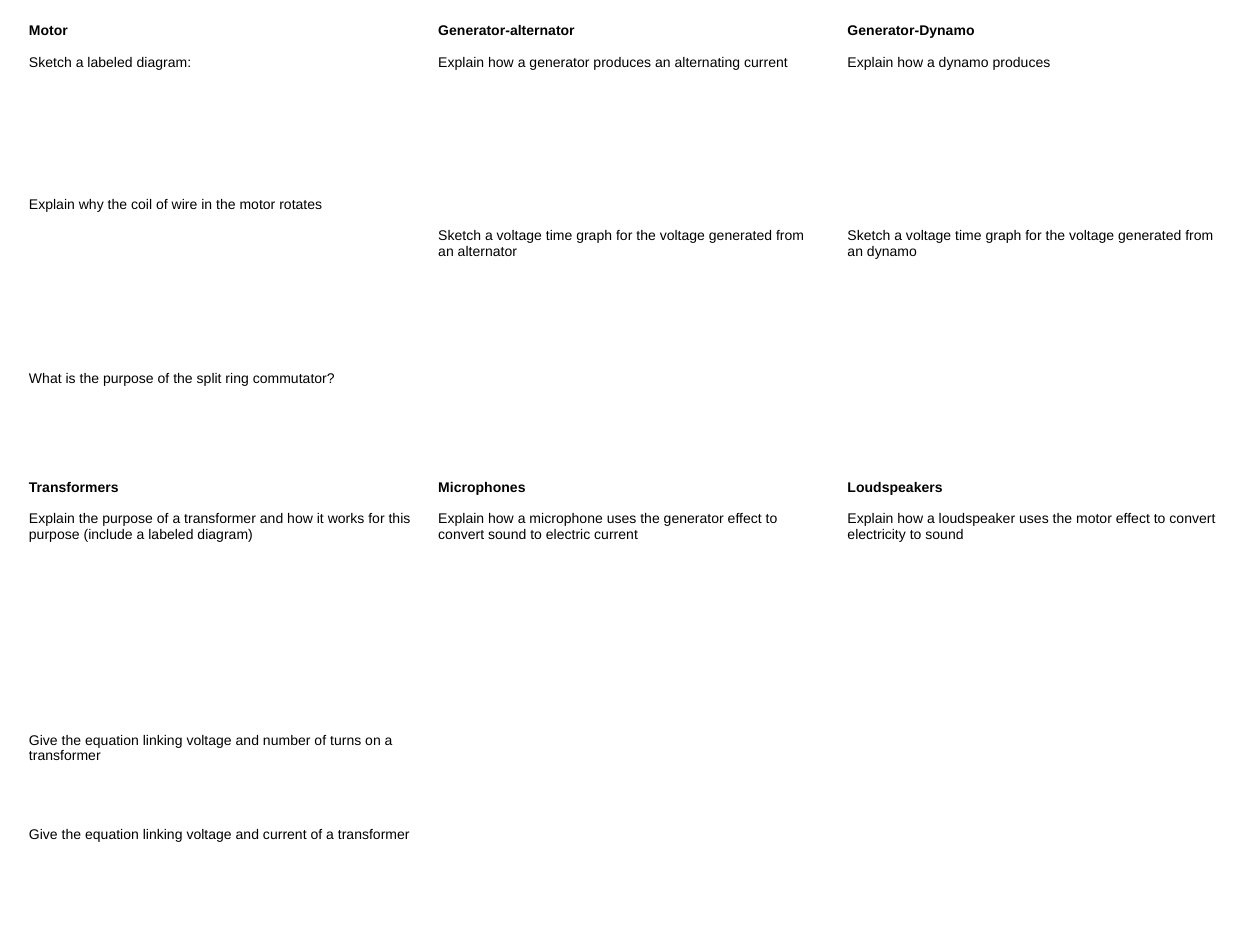
from pptx import Presentation
from pptx import util as u
from pptx.dml.color import RGBColor
from pptx.enum import text

# Each cell: heading, then (writing lines left free above, prompt)
TOPICS = [
    [
        ("Motor", [
            (1, "Sketch a labeled diagram:"),
            (8, "Explain why the coil of wire in the motor rotates"),
            (10, "What is the purpose of the split ring commutator?"),
        ]),
        ("Generator-alternator", [
            (1, "Explain how a generator produces an alternating current"),
            (10, "Sketch a voltage time graph for the voltage generated from an alternator"),
        ]),
        ("Generator-Dynamo", [
            (1, "Explain how a dynamo produces"),
            (10, "Sketch a voltage time graph for the voltage generated from an dynamo"),
        ]),
    ],
    [
        ("Transformers", [
            (1, "Explain the purpose of a transformer and how it works for this purpose "
                "(include a labeled diagram)"),
            (12, "Give the equation linking voltage and number of turns on a transformer"),
            (4, "Give the equation linking voltage and current of a transformer"),
        ]),
        ("Microphones", [
            (1, "Explain how a microphone uses the generator effect to convert sound "
                "to electric current"),
        ]),
        ("Loudspeakers", [
            (1, "Explain how a loudspeaker uses the motor effect to convert electricity "
                "to sound"),
        ]),
    ],
]
COLORS = {"text": "000000", "paper": "FFFFFF"}
FONT, SIZE, LINE_PITCH = "Arial", 8, 9.03  # points
MARGIN, COLUMN_WIDTH, ROW_HEIGHT = 0.33, 8.25, 9.21  # cm


def write(paragraph, words, free_lines=0, bold=False):
    paragraph.text = words
    paragraph.alignment = text.PP_ALIGN.LEFT
    if free_lines:
        paragraph.space_before = u.Pt(free_lines * LINE_PITCH)
    font = paragraph.font
    font.name, font.size, font.bold = FONT, u.Pt(SIZE), bold
    font.color.rgb = RGBColor.from_string(COLORS["text"])


def fill_cell(cell, heading, prompts):
    cell.fill.solid()
    cell.fill.fore_color.rgb = RGBColor.from_string(COLORS["paper"])
    cell.vertical_anchor = text.MSO_ANCHOR.TOP
    frame = cell.text_frame
    write(frame.paragraphs[0], heading, bold=True)
    for free_lines, prompt in prompts:
        write(frame.add_paragraph(), prompt, free_lines)


def main():
    deck = Presentation()
    deck.slide_width, deck.slide_height = u.Cm(25.4), u.Cm(19.05)
    slide = deck.slides.add_slide(deck.slide_layouts[6])

    # Revision grid
    rows, columns = len(TOPICS), len(TOPICS[0])
    grid = slide.shapes.add_table(
        rows, columns, u.Cm(MARGIN), u.Cm(MARGIN),
        u.Cm(columns * COLUMN_WIDTH), u.Cm(rows * ROW_HEIGHT)).table
    grid.first_row = grid.horz_banding = False

    # Topics
    for r, topic_row in enumerate(TOPICS):
        for c, (heading, prompts) in enumerate(topic_row):
            fill_cell(grid.cell(r, c), heading, prompts)

    deck.save("out.pptx")


if __name__ == "__main__":
    main()
